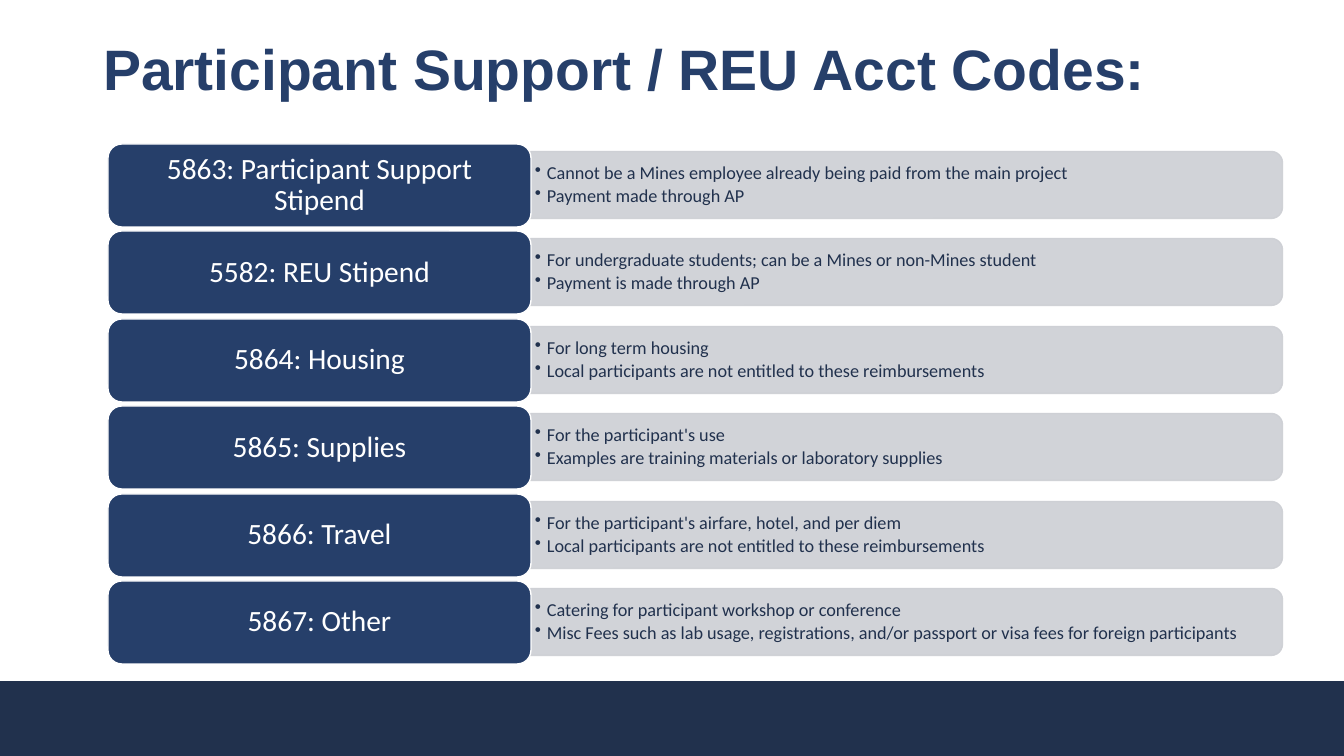
from dataclasses import dataclass

from lxml import etree
from pptx import Presentation
from pptx.dml.color import RGBColor
from pptx.enum.shapes import MSO_SHAPE as Shape
from pptx.enum.text import MSO_ANCHOR as Anchor, PP_ALIGN as Align
from pptx.oxml.ns import qn
from pptx.util import Emu, Pt

PX_PER_INCH = 100.8


def px(n: int) -> Emu:
    return Emu(round(n * 914400 / PX_PER_INCH))


@dataclass(frozen=True)
class Theme:
    navy: RGBColor = RGBColor.from_string("21314D")
    blue: RGBColor = RGBColor.from_string("263F6A")
    grey: RGBColor = RGBColor.from_string("CDCFD4")
    white: RGBColor = RGBColor.from_string("FFFFFF")
    title_font: str = "Arial"
    body_font: str = "Calibri"
    title_size: float = 40.7
    code_size: int = 21
    rule_size: int = 13
    band_opacity: int = 90


@dataclass(frozen=True)
class Box:
    x: int
    y: int
    w: int
    h: int

    def emu(self) -> tuple[Emu, Emu, Emu, Emu]:
        return px(self.x), px(self.y), px(self.w), px(self.h)


@dataclass(frozen=True)
class AccountCode:
    name: str
    rules: tuple[str, str]


THEME = Theme()
ROWS_TOP = 144
ROW_PITCH = 87.5

ACCOUNT_CODES = (
    AccountCode("5863: Participant Support Stipend", (
        "Cannot be a Mines employee already being paid from the main project",
        "Payment made through AP")),
    AccountCode("5582: REU Stipend", (
        "For undergraduate students; can be a Mines or non-Mines student",
        "Payment is made through AP")),
    AccountCode("5864: Housing", (
        "For long term housing",
        "Local participants are not entitled to these reimbursements")),
    AccountCode("5865: Supplies", (
        "For the participant's use",
        "Examples are training materials or laboratory supplies")),
    AccountCode("5866: Travel", (
        "For the participant's airfare, hotel, and per diem",
        "Local participants are not entitled to these reimbursements")),
    AccountCode("5867: Other", (
        "Catering for participant workshop or conference",
        "Misc Fees such as lab usage, registrations, and/or passport or visa "
        "fees for foreign participants")),
)


def add_block(slide, kind: Shape, box: Box, fill: RGBColor, line: RGBColor):
    sp = slide.shapes.add_shape(kind, *box.emu())
    sp.shadow.inherit = False
    sp.fill.solid()
    sp.fill.fore_color.rgb = fill
    sp.line.color.rgb = line
    sp.line.width = Pt(1)
    return sp


def set_insets(tf, side: int, edge: int) -> None:
    tf.margin_left = tf.margin_right = px(side)
    tf.margin_top = tf.margin_bottom = px(edge)
    tf.vertical_anchor = Anchor.MIDDLE
    tf.word_wrap = True


def format_text(p, font: str, size: float, color: RGBColor,
                bold: bool = False, spacing: float = 0.9) -> None:
    p.line_spacing = spacing
    for r in p.runs:
        r.font.name = font
        r.font.size = Pt(size)
        r.font.color.rgb = color
        r.font.bold = bold


def add_band(slide, y: int) -> None:
    """Grey band: an upright shape with a rounded top, turned to face right."""
    thickness, length, center_x = 67, 752, 906
    box = Box(center_x - thickness // 2, y - length // 2, thickness, length)
    sp = add_block(slide, Shape.ROUND_2_SAME_RECTANGLE, box, THEME.grey, THEME.grey)
    sp.rotation = 90
    for color in sp._element.spPr.iter(qn("a:srgbClr")):
        etree.SubElement(color, qn("a:alpha"), val=str(THEME.band_opacity * 1000))


def add_rules(slide, box: Box, rules: tuple[str, ...]) -> None:
    tf = slide.shapes.add_textbox(*box.emu()).text_frame
    set_insets(tf, 5, 3)
    tf.text = "\n".join(rules)
    for p in tf.paragraphs:
        p.level = 1
        p.space_after = Pt(2)
        format_text(p, THEME.body_font, THEME.rule_size, THEME.navy)
        pPr = p._p.get_or_add_pPr()
        pPr.set("marL", str(px(12)))
        pPr.set("indent", str(-px(12)))
        etree.SubElement(pPr, qn("a:buChar"), char="•")


def add_code(slide, box: Box, name: str) -> None:
    sp = add_block(slide, Shape.ROUNDED_RECTANGLE, box, THEME.blue, THEME.white)
    tf = sp.text_frame
    set_insets(tf, 13, 8)
    tf.text = name
    p = tf.paragraphs[0]
    p.alignment = Align.CENTER
    format_text(p, THEME.body_font, THEME.code_size, THEME.white)


def add_title(slide, box: Box, text: str) -> None:
    title = slide.shapes.title
    title.left, title.top, title.width, title.height = box.emu()
    tf = title.text_frame
    tf.text = text
    tf.vertical_anchor = Anchor.BOTTOM
    p = tf.paragraphs[0]
    p.alignment = Align.LEFT
    format_text(p, THEME.title_font, THEME.title_size, THEME.blue, True, 0.8)


def main() -> None:
    prs = Presentation()
    prs.slide_width, prs.slide_height = px(1344), px(756)
    slide = prs.slides.add_slide(prs.slide_layouts[5])

    # Footer bar and title
    add_block(slide, Shape.RECTANGLE, Box(0, 682, 1344, 74), THEME.navy, THEME.navy)
    add_title(slide, Box(93, 40, 1159, 66), "Participant Support / REU Acct Codes:")

    # One row per account code
    for i, code in enumerate(ACCOUNT_CODES):
        top = int(ROWS_TOP + i * ROW_PITCH)
        add_band(slide, top + 41)
        add_rules(slide, Box(530, top + 11, 749, 60), code.rules)
        add_code(slide, Box(108, top, 423, 83), code.name)

    prs.save("out.pptx")


if __name__ == "__main__":
    main()
